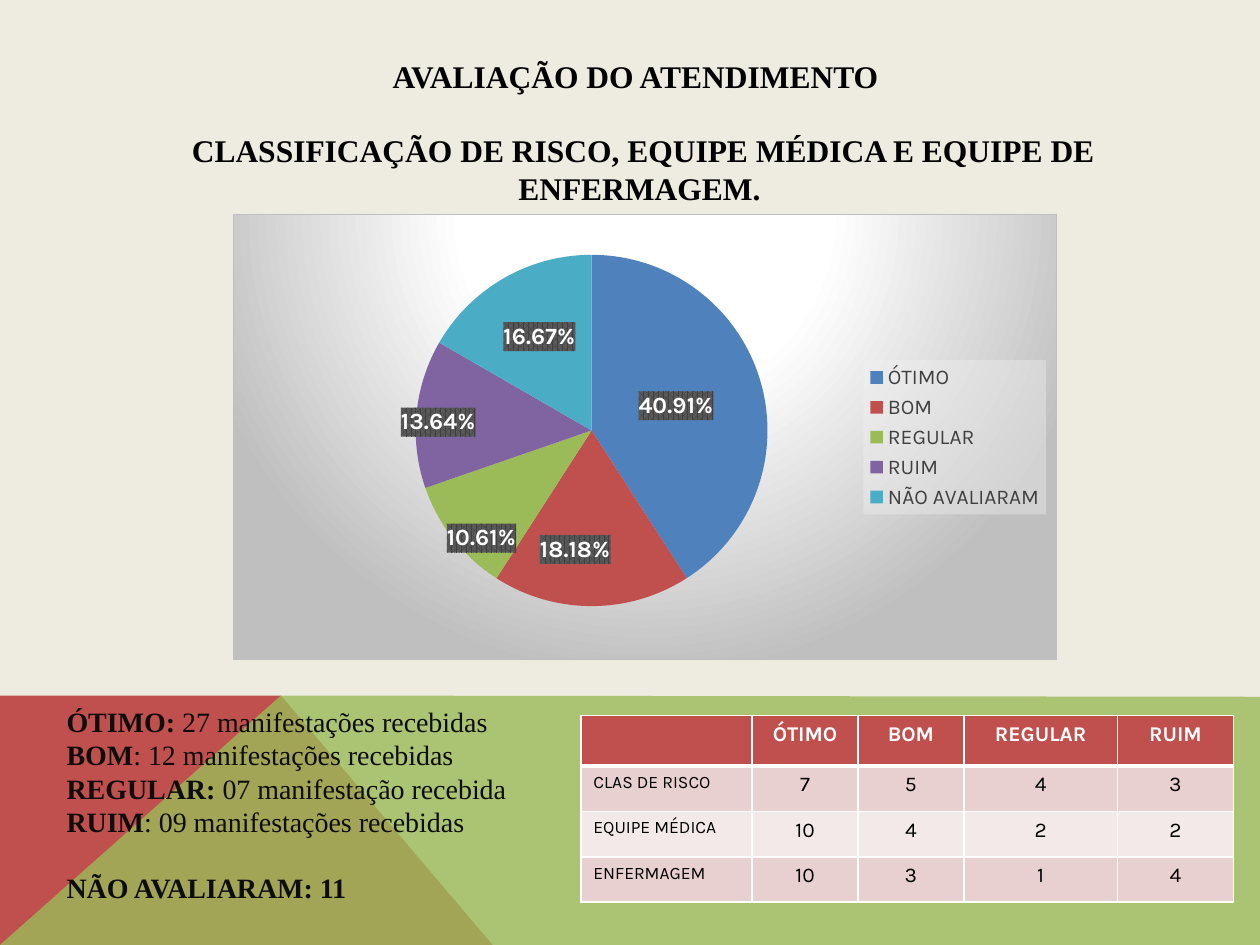
"""Build the slide on the evaluation of patient care."""
from copy import deepcopy
from dataclasses import dataclass

from lxml.etree import SubElement
from pptx import Presentation
from pptx.chart.data import CategoryChartData
from pptx.dml.color import RGBColor
from pptx.enum.chart import XL_CHART_TYPE, XL_LABEL_POSITION, XL_LEGEND_POSITION
from pptx.enum.text import MSO_ANCHOR, PP_ALIGN
from pptx.oxml import parse_xml
from pptx.oxml.ns import nsdecls, qn
from pptx.util import Inches, Pt


@dataclass(frozen=True)
class Theme:
    background: str = "EEECE1"
    red: str = "C0504D"
    green: str = "9BBB59"
    slices: tuple = ("4F81BD", "C0504D", "9BBB59", "8064A2", "4BACC6")
    bands: tuple = ("E8D0D0", "F4E9E9")
    black: str = "000000"
    ink: str = "0D0D0D"
    white: str = "FFFFFF"
    grey: str = "BFBFBF"
    dark: str = "404040"
    stripe: str = "595959"
    legend: str = "F2F2F2"
    serif: str = "Times New Roman"
    sans: str = "Karla"
    title: float = 18
    body: float = 16
    label: float = 13.3
    cell: float = 12
    small: float = 10


def rgb(value):
    return RGBColor.from_string(value)


def set_font(font, name, size, color, bold=False):
    font.name, font.size, font.bold = name, Pt(size), bold
    font.color.rgb = rgb(color)


def chart_fill(content):
    return parse_xml(f'<c:spPr {nsdecls("c", "a")}>{content}</c:spPr>')


def manual_layout(inner=False, **values):
    target = '<c:layoutTarget val="inner"/>' if inner else ""
    modes = '<c:xMode val="edge"/><c:yMode val="edge"/>' if inner else ""
    sizes = "".join(f'<c:{key} val="{value}"/>' for key, value in values.items())
    return parse_xml(f'<c:layout {nsdecls("c")}><c:manualLayout>'
                     f'{target}{modes}{sizes}</c:manualLayout></c:layout>')


class SlideBuilder:
    def __init__(self, slide, theme):
        self.s, self.theme = slide, theme
        fill = slide.background.fill
        fill.solid()
        fill.fore_color.rgb = rgb(theme.background)

    def polygon(self, points, color, opacity=100):
        start, *rest = [(Inches(x), Inches(y)) for x, y in points]
        builder = self.s.shapes.build_freeform(*start)
        builder.add_line_segments(rest, close=True)
        sp = builder.convert_to_shape()
        sp.shadow.inherit = False
        sp.line.fill.background()
        sp.fill.solid()
        sp.fill.fore_color.rgb = rgb(color)
        if opacity < 100:
            clr = sp.fill._xPr.find(".//" + qn("a:srgbClr"))
            SubElement(clr, qn("a:alpha")).set("val", str(opacity * 1000))

    def text(self, box, paragraphs, size, color, align=PP_ALIGN.LEFT,
             anchor=MSO_ANCHOR.TOP, gap_before=None):
        tf = self.s.shapes.add_textbox(*map(Inches, box)).text_frame
        tf.word_wrap, tf.vertical_anchor = True, anchor
        for i, (strong, plain) in enumerate(paragraphs):
            p = tf.paragraphs[0] if i == 0 else tf.add_paragraph()
            p.alignment = align
            if i == gap_before:
                p.space_before = Pt(size * 1.15)
            for content, bold in ((strong, True), (plain, False)):
                if content:
                    r = p.add_run()
                    r.text = content
                    set_font(r.font, self.theme.serif, size, color, bold)

    def pie(self, box, categories, values, offsets):
        t = self.theme
        data = CategoryChartData()
        data.categories = categories
        data.add_series("Series 1", values)
        chart = self.s.shapes.add_chart(
            XL_CHART_TYPE.PIE, *map(Inches, box), data).chart
        chart.has_title = False
        set_font(chart.font, t.sans, t.small, t.black)
        stops = "".join(
            f'<a:gs pos="{pos}"><a:srgbClr val="{color}"/></a:gs>'
            for pos, color in ((0, t.white), (39000, t.white), (100000, t.grey)))
        cs = chart._chartSpace
        cs.find(qn("c:chart")).addnext(chart_fill(
            f'<a:gradFill><a:gsLst>{stops}</a:gsLst><a:path path="circle">'
            '<a:fillToRect l="50000" t="-80000" r="50000" b="180000"/></a:path></a:gradFill>'
            f'<a:ln w="9525"><a:solidFill><a:srgbClr val="{t.grey}"/></a:solidFill></a:ln>'))

        area = cs.find(".//" + qn("c:plotArea"))
        for layout in area.findall(qn("c:layout")):
            area.remove(layout)
        area.insert(0, manual_layout(inner=True, x=0.22, y=0.09, w=0.43, h=0.79))

        chart.has_legend = True
        legend = chart.legend
        legend.position, legend.include_in_layout = XL_LEGEND_POSITION.RIGHT, False
        set_font(legend.font, t.sans, t.cell, t.dark)
        legend._element.find(qn("c:txPr")).addprevious(chart_fill(
            f'<a:solidFill><a:srgbClr val="{t.legend}">'
            '<a:alpha val="39000"/></a:srgbClr></a:solidFill>'))

        plot = chart.plots[0]
        plot.vary_by_categories = True
        series = plot.series[0]
        for i, color in enumerate(t.slices):
            fill = series.points[i].format.fill
            fill.solid()
            fill.fore_color.rgb = rgb(color)
        self.pie_labels(series.data_labels, offsets)

    def pie_labels(self, labels, offsets):
        t = self.theme
        labels.show_percentage, labels.show_value = True, False
        labels.number_format, labels.number_format_is_linked = "0.00%", False
        labels.position = XL_LABEL_POSITION.CENTER
        set_font(labels.font, t.sans, t.label, t.white, True)
        root = labels._element
        root.find(qn("c:txPr")).addprevious(chart_fill(
            f'<a:pattFill prst="pct75"><a:fgClr><a:srgbClr val="{t.dark}"/></a:fgClr>'
            f'<a:bgClr><a:srgbClr val="{t.stripe}"/></a:bgClr></a:pattFill>'))
        shared = [el for el in root if el.tag != qn("c:showLeaderLines")]
        for position, (idx, (x, y)) in enumerate(offsets.items()):
            label = parse_xml(f'<c:dLbl {nsdecls("c")}><c:idx val="{idx}"/></c:dLbl>')
            label.append(manual_layout(x=x, y=y))
            label.extend(deepcopy(shared))
            root.insert(position, label)

    def table(self, box, widths, heights, rows):
        t = self.theme
        table = self.s.shapes.add_table(
            len(rows), len(widths), *map(Inches, box)).table
        for column, width in zip(table.columns, widths):
            column.width = Inches(width)
        for row, height in zip(table.rows, heights):
            row.height = Inches(height)
        for i, row in enumerate(rows):
            for j, value in enumerate(row):
                header, name = i == 0, i > 0 and j == 0
                cell = table.cell(i, j)
                self.borders(cell, top=3 if i == 1 else 1, bottom=3 if header else 1)
                cell.fill.solid()
                cell.fill.fore_color.rgb = rgb(t.red if header else t.bands[(i - 1) % 2])
                cell.text_frame.text = value
                p = cell.text_frame.paragraphs[0]
                p.alignment = PP_ALIGN.LEFT if name else PP_ALIGN.CENTER
                for r in p.runs:
                    set_font(r.font, t.sans, t.small if name else t.cell,
                             t.white if header else t.black, header)

    def borders(self, cell, top, bottom):
        tc_pr = cell._tc.get_or_add_tcPr()
        for side, width in (("L", 1), ("R", 1), ("T", top), ("B", bottom)):
            tc_pr.append(parse_xml(
                f'<a:ln{side} {nsdecls("a")} w="{Pt(width)}"><a:solidFill>'
                f'<a:srgbClr val="{self.theme.white}"/></a:solidFill></a:ln{side}>'))


def main():
    prs = Presentation()
    prs.slide_width, prs.slide_height = Inches(10), Inches(7.5)
    t = Theme()
    s = SlideBuilder(prs.slides.add_slide(prs.slide_layouts[6]), t)
    s.polygon([(0, 7.5), (0, 5.52), (2.23, 5.52), (3.91, 7.5)], t.red)
    s.polygon([(0, 7.5), (2.23, 5.52), (10, 5.53), (10, 7.5)], t.green, 80)
    s.text((0.62, 0.4, 8.91, 1.3), [
        ("AVALIAÇÃO DO ATENDIMENTO ", ""),
        (" CLASSIFICAÇÃO DE RISCO, EQUIPE MÉDICA E EQUIPE DE ENFERMAGEM.", ""),
    ], t.title, t.black, PP_ALIGN.CENTER, MSO_ANCHOR.MIDDLE, gap_before=1)
    s.pie((1.85, 1.7, 6.54, 3.54),
          ["ÓTIMO", "BOM", "REGULAR", "RUIM", "NÃO AVALIARAM"],
          [40.91, 18.18, 10.61, 13.64, 16.67],
          {1: (-0.02, 0.07), 2: (-0.05, 0.12), 3: (-0.08, 0), 4: (-0.01, -0.04)})
    s.text((0.43, 5.54, 4.42, 2.29), [
        ("ÓTIMO: ", "27 manifestações recebidas"),
        ("BOM", ": 12 manifestações recebidas"),
        ("REGULAR: ", "07 manifestação recebida"),
        ("RUIM", ": 09 manifestações recebidas"),
        ("NÃO AVALIARAM: 11", ""),
    ], t.body, t.ink, gap_before=4)
    s.table((4.61, 5.68, 5.18, 1.48), [1.36, 0.84, 0.84, 1.22, 0.92], [0.4] + [0.36] * 3, [
        ["", "ÓTIMO", "BOM", "REGULAR", "RUIM"],
        ["CLAS DE RISCO", "7", "5", "4", "3"],
        ["EQUIPE MÉDICA", "10", "4", "2", "2"],
        ["ENFERMAGEM", "10", "3", "1", "4"],
    ])
    prs.save("out.pptx")


if __name__ == "__main__":
    main()
